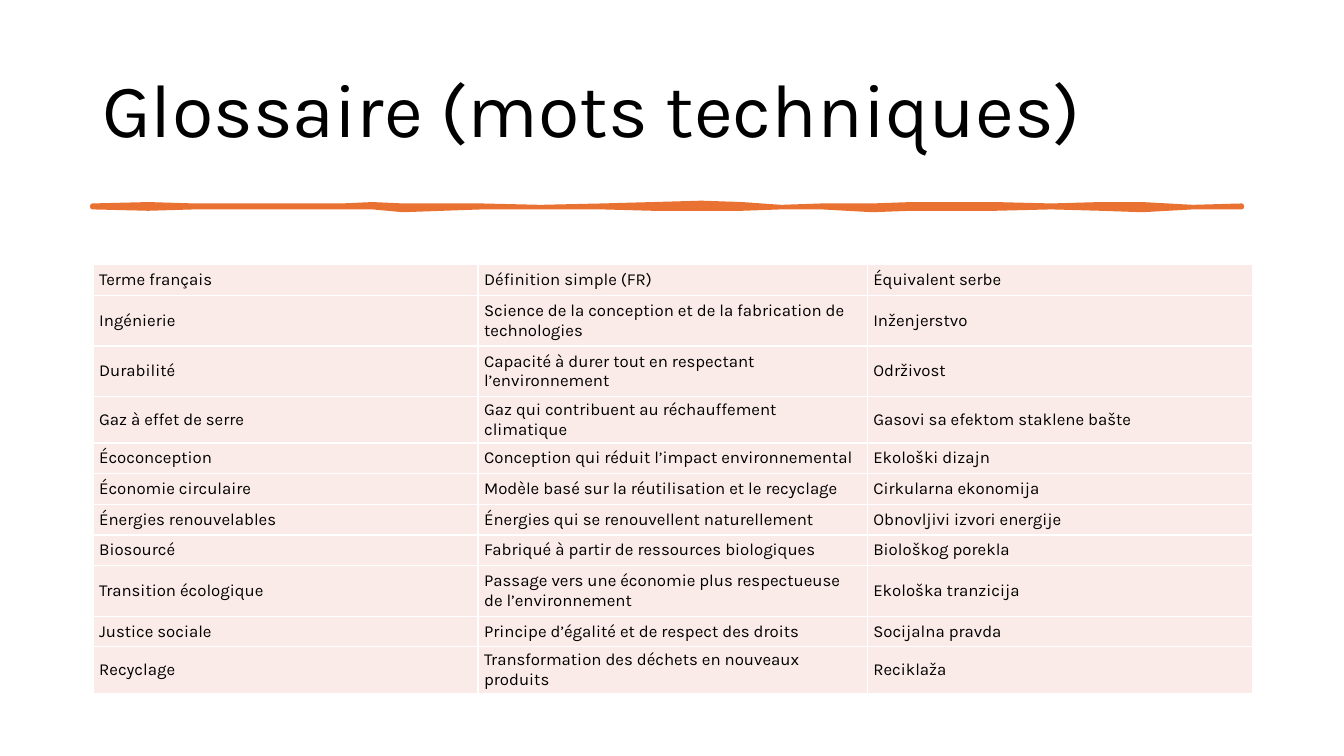
from dataclasses import dataclass

from lxml import etree
from pptx import Presentation
from pptx.dml.color import RGBColor
from pptx.enum.text import MSO_ANCHOR
from pptx.oxml.ns import qn
from pptx.util import Pt

MIDDLE = MSO_ANCHOR.MIDDLE


@dataclass(frozen=True)
class Theme:
    font: str = "Karla"
    ink: str = "000000"
    accent: str = "E97132"
    tint: str = "FBEBE8"
    rule: str = "FFFFFF"
    title: float = 54
    body: float = 12


class Deck:
    """Holds the theme and the current slide."""

    def __init__(self, theme):
        self.theme = theme
        self.prs = Presentation()
        self.prs.slide_width, self.prs.slide_height = Pt(960), Pt(540)
        self.slide = self.prs.slides.add_slide(self.prs.slide_layouts[6])

    def label(self, frame, text, size):
        run = frame.paragraphs[0].add_run()
        run.text = text
        run.font.name = self.theme.font
        run.font.size = Pt(size)
        run.font.color.rgb = RGBColor.from_string(self.theme.ink)

    def title(self, text, *box):
        frame = self.slide.shapes.add_textbox(*map(Pt, box)).text_frame
        frame.word_wrap = True
        frame.vertical_anchor = MIDDLE
        frame.paragraphs[0].line_spacing = 0.9
        self.label(frame, text, self.theme.title)

    def brush(self, left, mid, knots, weight):
        """Draw a closed band from knots of (x, rise, drop) around mid."""
        upper = [(left + x, mid - rise) for x, rise, drop in knots]
        lower = [(left + x, mid + drop) for x, rise, drop in knots]
        pen = self.slide.shapes.build_freeform(*upper[0], scale=Pt(1))
        pen.add_line_segments(upper[1:] + lower[::-1], close=True)
        band = pen.convert_to_shape()
        band.shadow.inherit = False
        color = RGBColor.from_string(self.theme.accent)
        band.fill.solid()
        band.fill.fore_color.rgb = color
        band.line.color.rgb = color
        band.line.width = Pt(weight)
        # Round joins
        outline = band.line.fill._xPr
        etree.SubElement(outline, qn("a:round"))

    def table(self, left, top, widths, heights, rows):
        grid = self.slide.shapes.add_table(
            len(rows), len(widths), Pt(left), Pt(top),
            Pt(sum(widths)), Pt(sum(heights))).table
        for col, width in zip(grid.columns, widths):
            col.width = Pt(width)
        for row, height, texts in zip(grid.rows, heights, rows):
            row.height = Pt(height)
            for cell, text in zip(row.cells, texts):
                self.cell(cell, text)

    def cell(self, cell, text):
        cell.margin_left = cell.margin_right = Pt(4.32)
        cell.margin_top = cell.margin_bottom = Pt(2.16)
        cell.vertical_anchor = MIDDLE
        self.label(cell.text_frame, text, self.theme.body)
        # Borders come before the fill in the cell properties
        props = cell._tc.get_or_add_tcPr()
        for side in ("a:lnL", "a:lnR", "a:lnT", "a:lnB"):
            edge = etree.SubElement(props, qn(side), w=str(Pt(1)))
            fill = etree.SubElement(edge, qn("a:solidFill"))
            etree.SubElement(fill, qn("a:srgbClr"), val=self.theme.rule)
        cell.fill.solid()
        cell.fill.fore_color.rgb = RGBColor.from_string(self.theme.tint)


# Brush stroke: x along the line, rise above and drop below its middle
STROKE = [
    (0, 0.5, 0.7), (40, 1.6, 1.5), (73, 0.4, 0.8), (114, 0.9, 0.8),
    (150, 0.3, 0.3), (178, 0.9, 0.1), (200, 1.4, 0.4), (222, 0.4, 2.2),
    (278, 0.4, 0.2), (320, 0.1, 0.9), (364, 0.9, 0.8), (400, 1.5, 1.2),
    (435, 2.2, 1.6), (464, 1.3, 1.2), (492, 0, 0.3), (521, 0.5, 0.1),
    (557, 0.2, 2.2), (585, 1.1, 1.8), (607, 2.1, 1.4), (645, 1.2, 1),
    (685, 0.3, 0.8), (720, 1.1, 1.4), (750, 1.6, 2), (786, 0, 0.4),
    (820.8, 0.3, 0.7),
]

TERMS = [
    ("Terme français", "Définition simple (FR)", "Équivalent serbe"),
    ("Ingénierie",
     "Science de la conception et de la fabrication de technologies",
     "Inženjerstvo"),
    ("Durabilité", "Capacité à durer tout en respectant l’environnement",
     "Održivost"),
    ("Gaz à effet de serre", "Gaz qui contribuent au réchauffement climatique",
     "Gasovi sa efektom staklene bašte"),
    ("Écoconception", "Conception qui réduit l’impact environnemental",
     "Ekološki dizajn"),
    ("Économie circulaire", "Modèle basé sur la réutilisation et le recyclage",
     "Cirkularna ekonomija"),
    ("Énergies renouvelables", "Énergies qui se renouvellent naturellement",
     "Obnovljivi izvori energije"),
    ("Biosourcé", "Fabriqué à partir de ressources biologiques",
     "Biološkog porekla"),
    ("Transition écologique",
     "Passage vers une économie plus respectueuse de l’environnement",
     "Ekološka tranzicija"),
    ("Justice sociale", "Principe d’égalité et de respect des droits",
     "Socijalna pravda"),
    ("Recyclage", "Transformation des déchets en nouveaux produits",
     "Reciklaža"),
]
TALL = {1, 2, 8}  # rows set higher for two lines of text


def main():
    deck = Deck(Theme())
    # Heading and brush stroke
    deck.title("Glossaire (mots techniques)", 66, 28.8, 828, 104.4)
    deck.brush(66, 147.6, STROKE, 3.25)
    # Glossary
    heights = [36.2 if i in TALL else 21.9 for i in range(len(TERMS))]
    deck.table(66.5, 189, (275, 278, 275), heights, TERMS)
    deck.prs.save("out.pptx")


if __name__ == "__main__":
    main()
